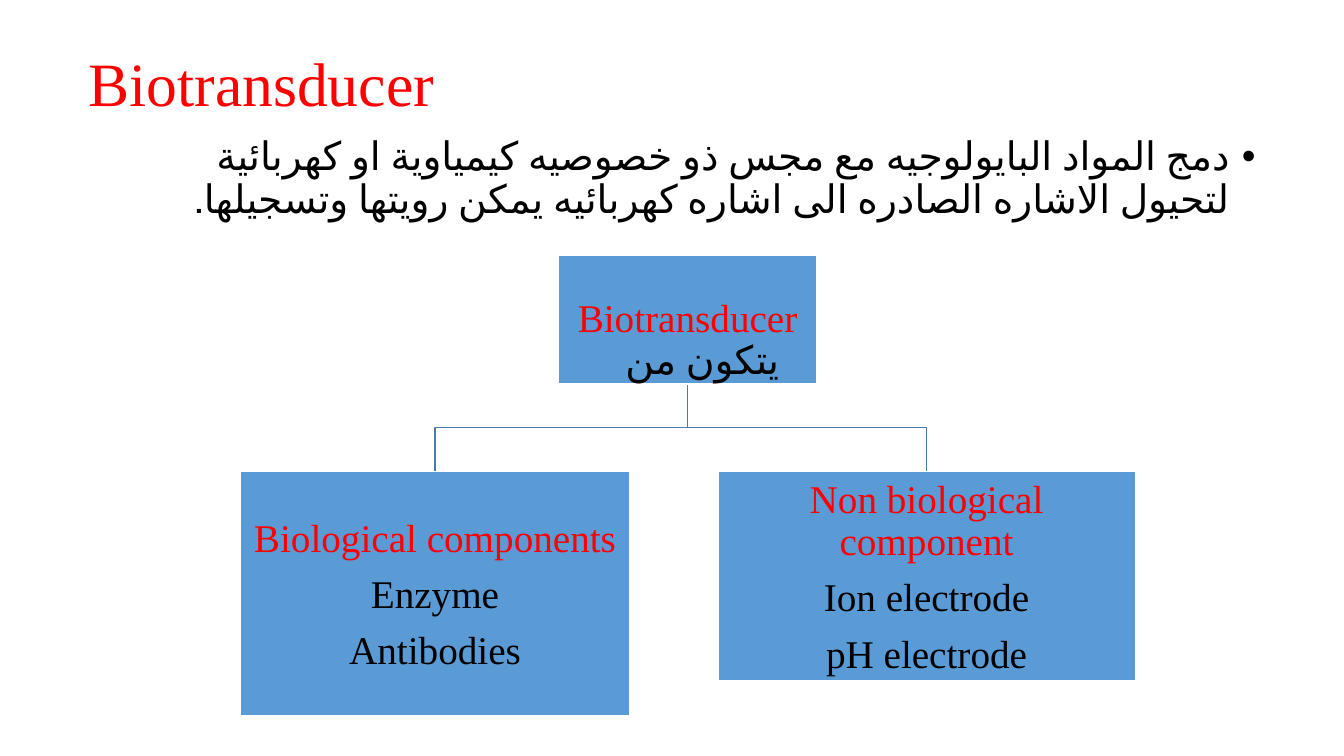
from lxml import etree
from pptx import Presentation
from pptx.dml.color import RGBColor
from pptx.enum.shapes import MSO_SHAPE
from pptx.enum.text import MSO_ANCHOR, PP_ALIGN
from pptx.oxml.ns import qn
from pptx.util import Inches, Pt

RECTANGLE = MSO_SHAPE.RECTANGLE
MIDDLE, TOP = MSO_ANCHOR.MIDDLE, MSO_ANCHOR.TOP
LEFT, CENTER, RIGHT = PP_ALIGN.LEFT, PP_ALIGN.CENTER, PP_ALIGN.RIGHT

COLORS = {"accent": "FF0000", "text": "000000", "box": "5B9BD5",
          "border": "FFFFFF", "link": "497CAB"}
LATIN, ARABIC = "Times New Roman", "Calibri"
ROOT = (5.54, 2.53, 2.56, 1.28)
ROOT_LABEL = (6.06, 3.28, 1.81, 0.57)
BRANCHES = [
    ((7.12, 4.68, 4.14, 2.07),
     ["Non biological component", "Ion electrode", "pH electrode"]),
    ((2.38, 4.68, 3.87, 2.42),
     ["Biological components", "Enzyme", "Antibodies"]),
]


def color(name):
    return RGBColor.from_string(COLORS[name])


def set_attributes(target, values):
    for name, value in values.items():
        setattr(target, name, value)


def write_paragraph(paragraph, text, color_name, font=LATIN, size=28, **formats):
    set_attributes(paragraph, {"alignment": CENTER, "line_spacing": 0.9, **formats})
    run = paragraph.add_run()
    run.text = text
    set_attributes(run.font, {"name": font, "size": Pt(size)})
    run.font.color.rgb = color(color_name)
    if font == ARABIC:
        paragraph._p.get_or_add_pPr().set("rtl", "1")
        run._r.get_or_add_rPr().set("lang", "ar-IQ")


def add_text(slide, box, text, color_name, anchor=TOP, **formats):
    shape = slide.shapes.add_textbox(*map(Inches, box))
    set_attributes(shape.text_frame, {"word_wrap": True, "vertical_anchor": anchor})
    paragraph = shape.text_frame.paragraphs[0]
    write_paragraph(paragraph, text, color_name, **formats)
    return paragraph


def add_title(slide, box):
    add_text(slide, box, "Biotransducer", "accent", MIDDLE, size=44, alignment=LEFT)


def add_definition(slide, box):
    paragraph = add_text(
        slide, box,
        "دمج المواد البايولوجيه مع مجس ذو خصوصيه كيمياوية او كهربائية "
        "لتحيول الاشاره الصادره الى اشاره كهربائيه يمكن رويتها وتسجيلها.",
        "text", font=ARABIC, alignment=RIGHT, space_before=Pt(10))
    properties = paragraph._p.get_or_add_pPr()
    properties.set("marL", str(Inches(0.25)))
    properties.set("indent", str(Inches(-0.25)))
    bullet_font = etree.SubElement(properties, qn("a:buFont"))
    bullet_font.set("typeface", "Arial")
    bullet = etree.SubElement(properties, qn("a:buChar"))
    bullet.set("char", "•")


def add_link(slide, parent, child):
    start_x, start_y = parent[0] + parent[2] / 2, parent[1] + parent[3]
    end_x, end_y = child[0] + child[2] / 2, child[1]
    middle_y = (start_y + end_y) / 2
    builder = slide.shapes.build_freeform(Inches(start_x), Inches(start_y))
    corners = [(start_x, middle_y), (end_x, middle_y), (end_x, end_y)]
    builder.add_line_segments([(Inches(x), Inches(y)) for x, y in corners], close=False)
    link = builder.convert_to_shape()
    link.shadow.inherit = False
    link.fill.background()
    link.line.color.rgb = color("link")
    link.line.width = Pt(1)


def add_node(slide, box, lines, top_margin=0.02):
    node = slide.shapes.add_shape(RECTANGLE, *map(Inches, box))
    node.shadow.inherit = False
    node.fill.solid()
    node.fill.fore_color.rgb = color("box")
    node.line.color.rgb = color("border")
    node.line.width = Pt(1)
    frame = node.text_frame
    margins = {f"margin_{side}": Inches(0.02) for side in ("left", "right", "bottom")}
    set_attributes(frame, {"word_wrap": True, "vertical_anchor": MIDDLE,
                           "margin_top": Inches(top_margin), **margins})
    for index, line in enumerate(lines):
        paragraph = frame.add_paragraph() if index else frame.paragraphs[0]
        spacing = Pt(10) if index < len(lines) - 1 else Pt(0)
        write_paragraph(paragraph, line, "text" if index else "accent", space_after=spacing)


def add_hierarchy(slide, root, branches):
    for box, lines in branches:
        add_link(slide, root, box)
    add_node(slide, root, ["Biotransducer"])
    for box, lines in branches:
        add_node(slide, box, lines, top_margin=0.06)
    add_text(slide, ROOT_LABEL, "يتكون من", "text", font=ARABIC, line_spacing=1.0)


def main():
    presentation = Presentation()
    set_attributes(presentation, {"slide_width": Inches(13.33), "slide_height": Inches(7.5)})
    slide = presentation.slides.add_slide(presentation.slide_layouts[6])
    add_title(slide, (0.78, 0.13, 11.5, 1.45))
    add_definition(slide, (1.05, 1.31, 11.5, 4.76))
    add_hierarchy(slide, ROOT, BRANCHES)
    presentation.save("out.pptx")


if __name__ == "__main__":
    main()
